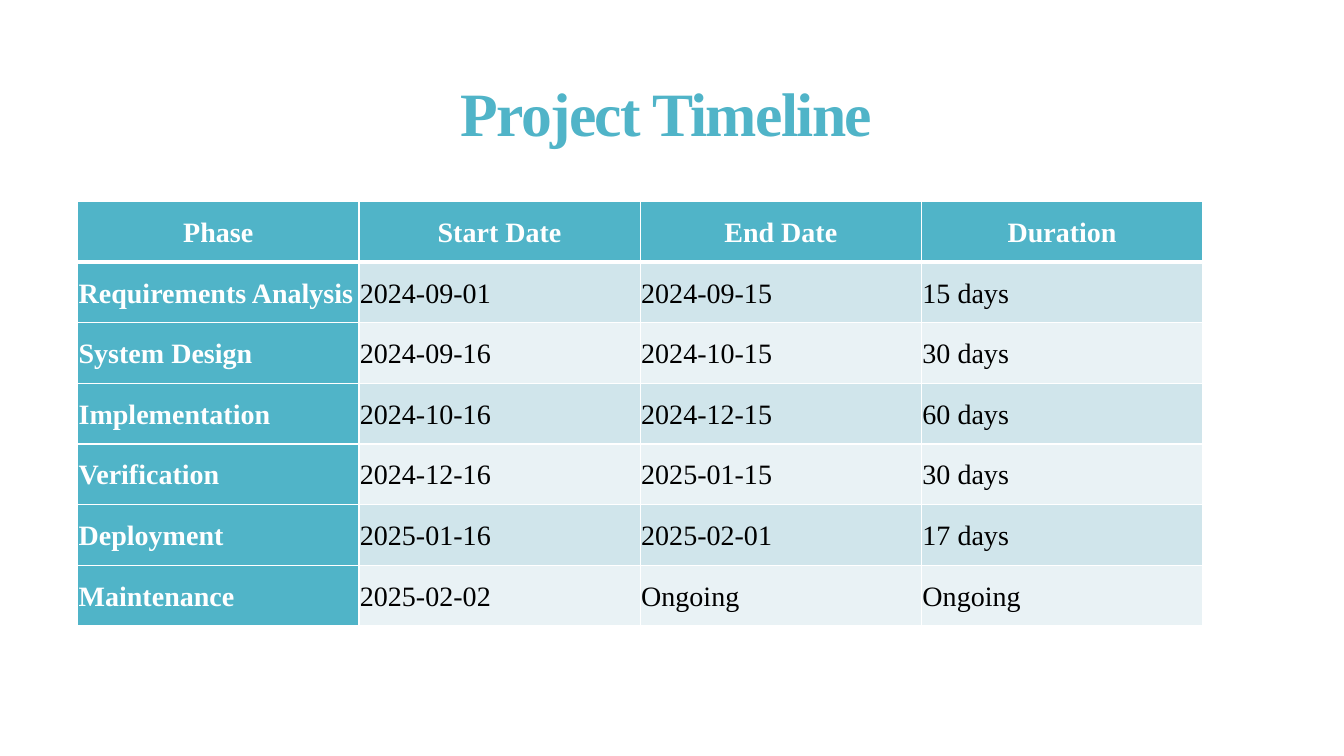
import pptx
import pptx.dml.color
import pptx.enum.text
import pptx.oxml
import pptx.oxml.ns
import pptx.util
from pptx.util import Inches

TEAL, WHITE, BLACK = "50B4C8", "FFFFFF", "000000"
BANDS = ["D0E5EB", "E9F2F5"]
ALIGN = pptx.enum.text.PP_ALIGN
MIDDLE = pptx.enum.text.MSO_ANCHOR.MIDDLE

ROWS = [
    ["Phase", "Start Date", "End Date", "Duration"],
    ["Requirements Analysis", "2024-09-01", "2024-09-15", "15 days"],
    ["System Design", "2024-09-16", "2024-10-15", "30 days"],
    ["Implementation", "2024-10-16", "2024-12-15", "60 days"],
    ["Verification", "2024-12-16", "2025-01-15", "30 days"],
    ["Deployment", "2025-01-16", "2025-02-01", "17 days"],
    ["Maintenance", "2025-02-02", "Ongoing", "Ongoing"],
]


def rgb(code):
    return pptx.dml.color.RGBColor.from_string(code)


def write(frame, text, size=20, color=BLACK, bold=False, align=ALIGN.LEFT, spacing=0):
    para = frame.paragraphs[0]
    para.alignment = align
    para.line_spacing = 1.07
    para.space_after = pptx.util.Pt(8)
    span = para.add_run()
    span.text = text
    span.font.name = "Times New Roman"
    span.font.size = pptx.util.Pt(size)
    span.font.bold = bold
    span.font.color.rgb = rgb(color)
    if spacing:
        span.font._element.set("spc", str(round(spacing * 100)))


deck = pptx.Presentation()
deck.slide_width, deck.slide_height = Inches(13.33), Inches(7.5)
page = deck.slides.add_slide(deck.slide_layouts[5])

# Title, lifted above the middle of its box by the bottom margin
title = page.shapes.title
title.left, title.top = Inches(0.72), Inches(0.55)
title.width, title.height = Inches(11.78), Inches(1.81)
frame = title.text_frame
frame.auto_size = pptx.enum.text.MSO_AUTO_SIZE.NONE
frame.vertical_anchor = MIDDLE
frame.margin_bottom = Inches(0.8)
write(frame, "Project Timeline", size=44, color=TEAL, bold=True,
      align=ALIGN.CENTER, spacing=-1.2)

# Timeline table
timeline = page.shapes.add_table(
    len(ROWS), len(ROWS[0]), Inches(0.77), Inches(2), Inches(11.16), Inches(4.21)
).table
timeline.first_col = True

for row_index, row in enumerate(ROWS):
    for column_index, text in enumerate(row):
        cell = timeline.cell(row_index, column_index)
        header = row_index == 0
        strong = header or column_index == 0
        cell.vertical_anchor = MIDDLE
        cell.margin_left = cell.margin_right = Inches(0.01)
        cell.margin_top = cell.margin_bottom = Inches(0.01)

        # White borders, thicker under the header
        borders = {"lnL": 1, "lnR": 1, "lnT": 3 if row_index == 1 else 1,
                   "lnB": 3 if header else 1}
        for side, width in borders.items():
            cell._tc.get_or_add_tcPr().append(pptx.oxml.parse_xml(
                f'<a:{side} {pptx.oxml.ns.nsdecls("a")} w="{pptx.util.Pt(width)}">'
                f'<a:solidFill><a:srgbClr val="{WHITE}"/></a:solidFill></a:{side}>'))

        cell.fill.solid()
        cell.fill.fore_color.rgb = rgb(TEAL if strong else BANDS[(row_index - 1) % 2])
        write(cell.text_frame, text, color=WHITE if strong else BLACK, bold=strong,
              align=ALIGN.CENTER if header else ALIGN.LEFT)

deck.save("out.pptx")
